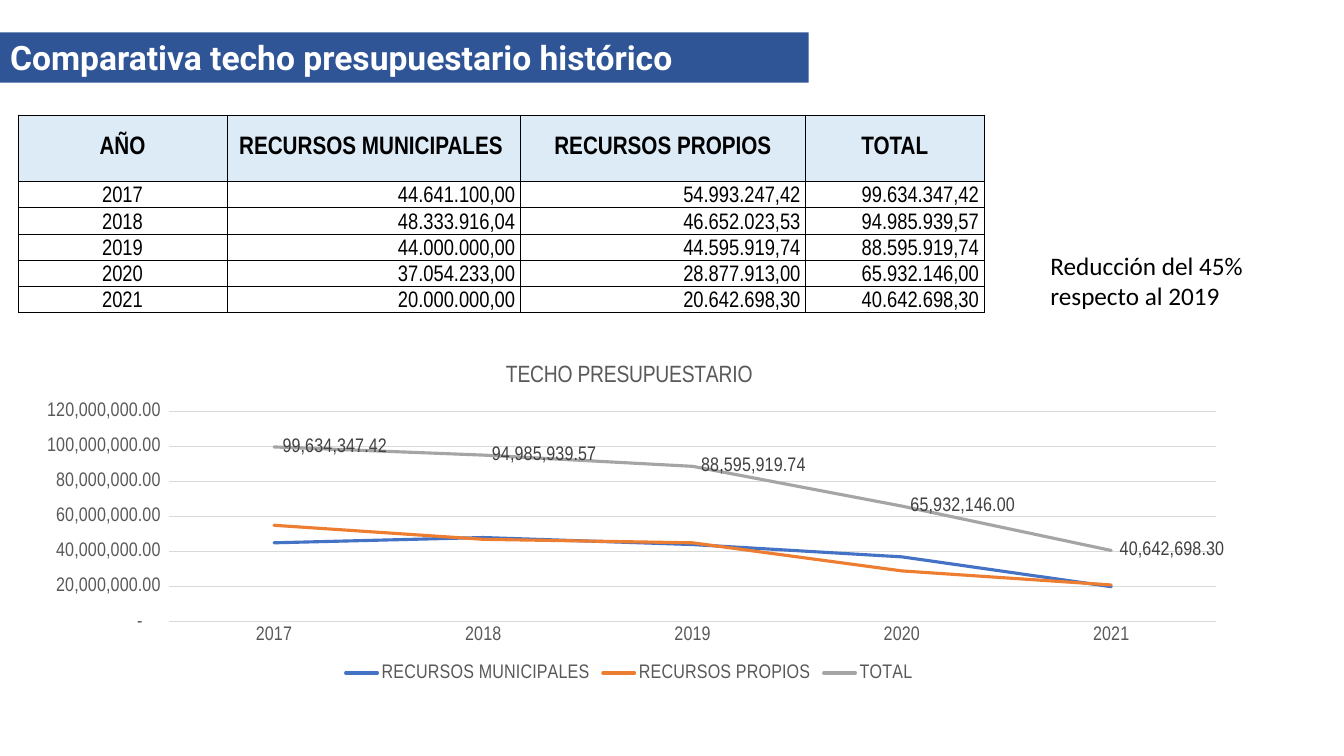
from pptx import Presentation
from pptx.chart.data import CategoryChartData
from pptx.dml.color import RGBColor
from pptx.enum.chart import (XL_CHART_TYPE as ChartType, XL_LABEL_POSITION as LabelAt,
                             XL_LEGEND_POSITION as LegendAt, XL_TICK_MARK as Tick)
from pptx.enum.text import MSO_ANCHOR as Anchor, PP_ALIGN as Align
from pptx.oxml import parse_xml
from pptx.oxml.ns import nsdecls
from pptx.util import Inches, Pt

HEADING = "Comparativa techo presupuestario histórico"
COLUMNS = ["AÑO", "RECURSOS MUNICIPALES", "RECURSOS PROPIOS", "TOTAL"]
COLUMN_WIDTHS = [2.07, 2.91, 2.83, 1.77]
HEADER_INSETS = [0, 0.05, 0, 0]
VALUE_INSETS = [0, 0.05, 0.05, 0.05]
BUDGETS = [
    ("2017", 44641100.00, 54993247.42),
    ("2018", 48333916.04, 46652023.53),
    ("2019", 44000000.00, 44595919.74),
    ("2020", 37054233.00, 28877913.00),
    ("2021", 20000000.00, 20642698.30),
]
REMARK = "Reducción del 45% respecto al 2019"
TREND_TITLE = "TECHO PRESUPUESTARIO"
TREND_DIGITS = [-6, -6, 2]
SERIES_COLORS = ["4472C4", "ED7D31", "A5A5A5"]
AMOUNT_FORMAT = r'_(* #,##0.00_);_(* \(#,##0.00\);_(* "-"??_);_(@_)'
TREND_WIDTH, TREND_HEIGHT = 12.12, 3.37
PLOT_LEFT, PLOT_TOP, PLOT_WIDTH, PLOT_HEIGHT = 1.5, 0.64, 10.38, 2.09
HEADER_HEIGHT, ROW_HEIGHT = 0.66, 0.26
NARROW = "Arial Narrow"


def rgb(color):
    return RGBColor.from_string(color)


def style(font, size, color, name=NARROW, bold=False):
    font.size, font.name, font.bold = Pt(size), name, bold
    font.color.rgb = rgb(color)


def write(frame, words, size, color, name=NARROW, bold=False, align=Align.LEFT):
    paragraph = frame.paragraphs[0]
    paragraph.alignment = align
    run = paragraph.add_run()
    run.text = words
    style(run.font, size, color, name, bold)


def rule(line, color, width):
    line.color.rgb = rgb(color)
    line.width = Pt(width)


def spanish(amount):
    return f"{amount:,.2f}".translate(str.maketrans(",.", ".,"))


def fill_cell(cell, words, header, align, inset):
    cell.margin_left = cell.margin_top = cell.margin_bottom = 0
    cell.margin_right = Inches(inset)
    cell.vertical_anchor = Anchor.MIDDLE if header else Anchor.BOTTOM
    write(cell.text_frame, words, 18 if header else 16, "000000", bold=header, align=align)
    properties = cell._tc.get_or_add_tcPr()
    for side in "LRTB":
        properties.append(parse_xml(
            f'<a:ln{side} {nsdecls("a")} w="6350"><a:solidFill>'
            f'<a:srgbClr val="000000"/></a:solidFill></a:ln{side}>'))
    if header:
        cell.fill.solid()
        cell.fill.fore_color.rgb = rgb("DDEBF7")
    else:
        cell.fill.background()


def add_budget_table(slide, records):
    heights = [HEADER_HEIGHT] + [ROW_HEIGHT] * len(records)
    budget = slide.shapes.add_table(
        len(heights), len(COLUMNS), Inches(0.18), Inches(1.14),
        Inches(sum(COLUMN_WIDTHS)), Inches(sum(heights))).table
    budget.first_row = budget.horz_banding = False
    for column, width in zip(budget.columns, COLUMN_WIDTHS):
        column.width = Inches(width)
    for row, height in zip(budget.rows, heights):
        row.height = Inches(height)
    lines = [COLUMNS] + [[year, *map(spanish, amounts)] for year, *amounts in records]
    for r, line in enumerate(lines):
        insets = VALUE_INSETS if r else HEADER_INSETS
        for c, words in enumerate(line):
            align = Align.RIGHT if r and c else Align.CENTER
            fill_cell(budget.cell(r, c), words, r == 0, align, insets[c])


def add_trend(slide, records):
    years, *amounts = zip(*records)
    data = CategoryChartData()
    data.categories = years
    for name, values, digits in zip(COLUMNS[1:], amounts, TREND_DIGITS):
        data.add_series(name, [round(value, digits) for value in values])
    trend = slide.shapes.add_chart(
        ChartType.LINE, Inches(0.18), Inches(3.44),
        Inches(TREND_WIDTH), Inches(TREND_HEIGHT), data).chart
    style(trend.font, 14, "595959")
    trend.has_title = True
    write(trend.chart_title.text_frame, TREND_TITLE, 16.8, "595959", align=Align.CENTER)
    trend.chart_title.include_in_layout = False
    trend.has_legend = True
    trend.legend.position = LegendAt.BOTTOM
    trend.legend.include_in_layout = False
    style(trend.legend.font, 14, "595959")

    for axis in (trend.category_axis, trend.value_axis):
        axis.major_tick_mark = axis.minor_tick_mark = Tick.NONE
        style(axis.tick_labels.font, 14, "595959")
    rule(trend.category_axis.format.line, "D9D9D9", 0.75)
    scale = trend.value_axis
    scale.minimum_scale, scale.maximum_scale, scale.major_unit = 0, 120000000, 20000000
    scale.format.line.fill.background()
    rule(scale.major_gridlines.format.line, "D9D9D9", 0.75)

    plot = trend.plots[0]
    plot.vary_by_categories = False
    for series, color in zip(plot.series, SERIES_COLORS):
        series.smooth = False
        rule(series.format.line, color, 2.25)
        for stroke in series.format.line._get_or_add_ln().xpath("."):
            stroke.set("cap", "rnd")
    labels = plot.series[-1].data_labels
    labels.show_value = True
    labels.position = LabelAt.RIGHT
    style(labels.font, 14, "404040")
    for amounts_shown in (scale.tick_labels, labels):
        amounts_shown.number_format = AMOUNT_FORMAT
        amounts_shown.number_format_is_linked = False

    area = trend.element.chart.plotArea
    for layout in area.xpath("c:layout"):
        area.remove(layout)
    shares = {"x": PLOT_LEFT / TREND_WIDTH, "y": PLOT_TOP / TREND_HEIGHT,
              "w": PLOT_WIDTH / TREND_WIDTH, "h": PLOT_HEIGHT / TREND_HEIGHT}
    places = "".join(f'<c:{key} val="{share}"/>' for key, share in shares.items())
    area.insert(0, parse_xml(
        f'<c:layout {nsdecls("c")}><c:manualLayout><c:layoutTarget val="inner"/>'
        f'<c:xMode val="edge"/><c:yMode val="edge"/>{places}</c:manualLayout></c:layout>'))


def main():
    deck = Presentation()
    deck.slide_width, deck.slide_height = Inches(13.33), Inches(7.5)
    slide = deck.slides.add_slide(deck.slide_layouts[5])
    records = [(year, city, own, round(city + own, 2)) for year, city, own in BUDGETS]

    heading = slide.shapes.title
    heading.left, heading.top = Inches(0), Inches(0.32)
    heading.width, heading.height = Inches(8.02), Inches(0.5)
    heading.fill.solid()
    heading.fill.fore_color.rgb = rgb("2F5597")
    heading.text_frame.vertical_anchor = Anchor.MIDDLE
    write(heading.text_frame, HEADING, 24, "FFFFFF", "Roboto", True)

    add_budget_table(slide, records)
    add_trend(slide, records)

    remark = slide.shapes.add_textbox(Inches(10.32), Inches(2.43), Inches(2.65), Inches(0.71))
    remark.text_frame.word_wrap = True
    write(remark.text_frame, REMARK, 18, "000000", "Calibri")
    deck.save("out.pptx")


if __name__ == "__main__":
    main()
